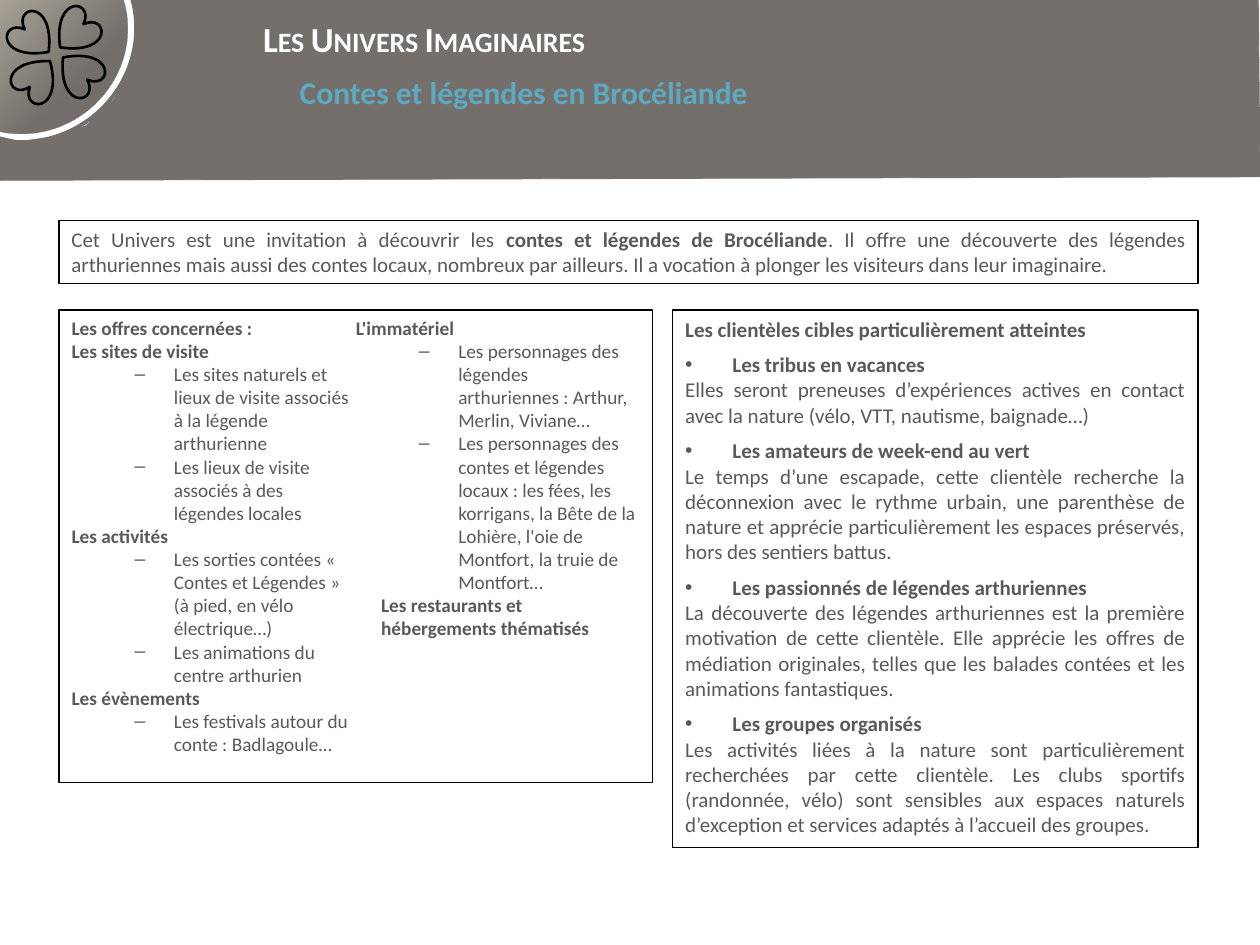
import pptx
import pptx.util
import pptx.dml.color
import pptx.enum.shapes
import pptx.enum.text
import pptx.oxml

Pt = pptx.util.Pt
PRESET = pptx.enum.shapes.MSO_SHAPE
ALIGN = pptx.enum.text.PP_ALIGN
NS = 'xmlns:a="http://schemas.openxmlformats.org/drawingml/2006/main"'
TAUPE, GREY, BLACK, WHITE, BLUE = "746F6B", "595959", "000000", "FFFFFF", "5CA9C2"
rgb = pptx.dml.color.RGBColor.from_string

deck = pptx.Presentation()
deck.slide_width, deck.slide_height = Pt(720), Pt(540)
slide = deck.slides.add_slide(deck.slide_layouts[6])
shapes = slide.shapes


def outline(preset, left, top, width, height, color, weight, rotation=0):
    shape = shapes.add_shape(preset, Pt(left), Pt(top), Pt(width), Pt(height))
    shape.rotation = rotation
    shape.shadow.inherit = False
    shape.fill.background()
    if color:
        shape.line.color.rgb = rgb(color)
        shape.line.width = Pt(weight)
    else:
        shape.line.fill.background()
    return shape


def write(frame, paragraphs, size, color, align):
    frame.word_wrap = True
    frame.auto_size = pptx.enum.text.MSO_AUTO_SIZE.SHAPE_TO_FIT_TEXT
    frame.vertical_anchor = pptx.enum.text.MSO_ANCHOR.TOP
    for index, (text, bullet, margin, hanging, after) in enumerate(paragraphs):
        paragraph = frame.paragraphs[0] if index == 0 else frame.add_paragraph()
        paragraph.alignment = align
        paragraph.space_after = Pt(after)
        properties = paragraph._p.get_or_add_pPr()
        properties.set("marL", str(Pt(margin)))
        properties.set("indent", str(Pt(-hanging)))
        if bullet:
            properties.append(pptx.oxml.parse_xml(f'<a:buFont {NS} typeface="Arial"/>'))
            properties.append(pptx.oxml.parse_xml(f'<a:buChar {NS} char="{bullet}"/>'))
        for part, words in enumerate(text.split("*")):
            if words:
                run = paragraph.add_run()
                run.text = words
                run.font.name = "Calibri"
                run.font.size = Pt(size)
                run.font.bold = part % 2 == 1
                run.font.color.rgb = rgb(color)


medallion = outline(PRESET.OVAL, -43.2, -41, 114.5, 118.8, None, 0, 57.7)
medallion.fill.gradient()
gradient = pptx.oxml.parse_xml(
    f'<a:gradFill {NS} rotWithShape="1"><a:gsLst>'
    f'<a:gs pos="32000"><a:srgbClr val="{TAUPE}"/></a:gs>'
    '<a:gs pos="99000"><a:srgbClr val="D3CBB4"><a:alpha val="70000"/></a:srgbClr></a:gs>'
    '</a:gsLst><a:path path="circle"><a:fillToRect l="100000" t="100000"/></a:path></a:gradFill>')
medallion_fill = medallion._element.spPr.find(pptx.oxml.ns.qn("a:gradFill"))
medallion_fill.getparent().replace(medallion_fill, gradient)

band_points = [(1.05, -0.02), (9.99, -0.01), (10, 1.4), (-0.03, 1.43), (-0.02, 1.09), (0.16, 1.12),
               (0.43, 1.09), (0.68, 1), (0.9, 0.79), (1.03, 0.55), (1.1, 0.24)]
band_points = [(x * 72, y * 72) for x, y in band_points]
band_outline = shapes.build_freeform(*band_points[0], scale=Pt(1))
band_outline.add_line_segments(band_points[1:], close=True)
band = band_outline.convert_to_shape()
band.shadow.inherit = False
band.fill.solid()
band.fill.fore_color.rgb = rgb(TAUPE)
band.line.color.rgb = rgb(TAUPE)
band.line.width = Pt(0.5)

outline(PRESET.OVAL, -49, -46.8, 125.3, 129.6, TAUPE, 2.25, 57.7)
for left, top, rotation in [(8.6, 32.2, 218.1), (33, 28.8, 132.6), (6.5, 8.6, 313.5), (31, 5.8, 45.2)]:
    outline(PRESET.HEART, left, top, 24.5, 25, BLACK, 1.5, rotation)

title = shapes.add_textbox(Pt(143.3), Pt(6.5), Pt(557.3), Pt(30.2)).text_frame
write(title, [("*Les Univers Imaginaires*", "", 0, 0, 0)], 20, WHITE, ALIGN.LEFT)
title.paragraphs[0].runs[0].font._element.set("cap", "small")
subtitle = shapes.add_textbox(Pt(164.2), Pt(38.2), Pt(340.6), Pt(28.8)).text_frame
write(subtitle, [("*Contes et légendes en Brocéliande*", "", 0, 0, 0)], 18, BLUE, ALIGN.JUSTIFY)

introduction = outline(PRESET.RECTANGLE, 33.8, 126, 650.9, 36, BLACK, 0.75).text_frame
write(introduction, [(
    "Cet Univers est une invitation à découvrir les *contes et légendes de Brocéliande*. Il offre une "
    "découverte des légendes arthuriennes mais aussi des contes locaux, nombreux par ailleurs. Il a "
    "vocation à plonger les visiteurs dans leur imaginaire.", "", 0, 0, 0)], 12, GREY, ALIGN.JUSTIFY)

offers = [
    ("Les offres concernées :", []),
    ("Les sites de visite", [
        "Les sites naturels et lieux de visite associés à la légende arthurienne",
        "Les lieux de visite associés à des légendes locales"]),
    ("Les activités", [
        "Les sorties contées « Contes et Légendes » (à pied, en vélo électrique…)",
        "Les animations du centre arthurien"]),
    ("Les évènements", ["Les festivals autour du conte : Badlagoule…"]),
    ("L'immatériel", [
        "Les personnages des légendes arthuriennes : Arthur, Merlin, Viviane…",
        "Les personnages des contes et légendes locaux : les fées, les korrigans, la Bête de la "
        "Lohière, l'oie de Montfort, la truie de Montfort…"]),
    ("Les restaurants et hébergements thématisés", []),
]
offer_lines = []
for heading, examples in offers:
    margin = 14.4 if heading.startswith("Les restaurants") else 0
    offer_lines.append((f"*{heading}*", "", margin, 0, 0))
    offer_lines += [(example, "–", 58.5, 22.5, 0) for example in examples]
offers_frame = outline(PRESET.RECTANGLE, 33.8, 177.1, 339.1, 270, BLACK, 0.75).text_frame
write(offers_frame, offer_lines, 11, GREY, ALIGN.LEFT)
offers_frame._txBody.bodyPr.set("numCol", "2")

audiences = [
    ("Les tribus en vacances",
     "Elles seront preneuses d’expériences actives en contact avec la nature (vélo, VTT, nautisme, "
     "baignade…)"),
    ("Les amateurs de week-end au vert",
     "Le temps d’une escapade, cette clientèle recherche la déconnexion avec le rythme urbain, une "
     "parenthèse de nature et apprécie particulièrement les espaces préservés, hors des sentiers battus."),
    ("Les passionnés de légendes arthuriennes",
     "La découverte des légendes arthuriennes est la première motivation de cette clientèle. Elle "
     "apprécie les offres de médiation originales, telles que les balades contées et les animations "
     "fantastiques."),
    ("Les groupes organisés",
     "Les activités liées à la nature sont particulièrement recherchées par cette clientèle. Les clubs "
     "sportifs (randonnée, vélo) sont sensibles aux espaces naturels d’exception et services adaptés à "
     "l’accueil des groupes."),
]
audience_lines = [("*Les clientèles cibles particulièrement atteintes*", "", 0, 0, 6)]
for audience, description in audiences:
    audience_lines.append((f"*{audience}*", "•", 27, 27, 0))
    audience_lines.append((description, "", 0, 0, 0 if audience == audiences[-1][0] else 6))
audiences_frame = outline(PRESET.RECTANGLE, 384.5, 177.1, 300.2, 307.4, BLACK, 0.75).text_frame
write(audiences_frame, audience_lines, 12, GREY, ALIGN.JUSTIFY)

deck.save("out.pptx")
